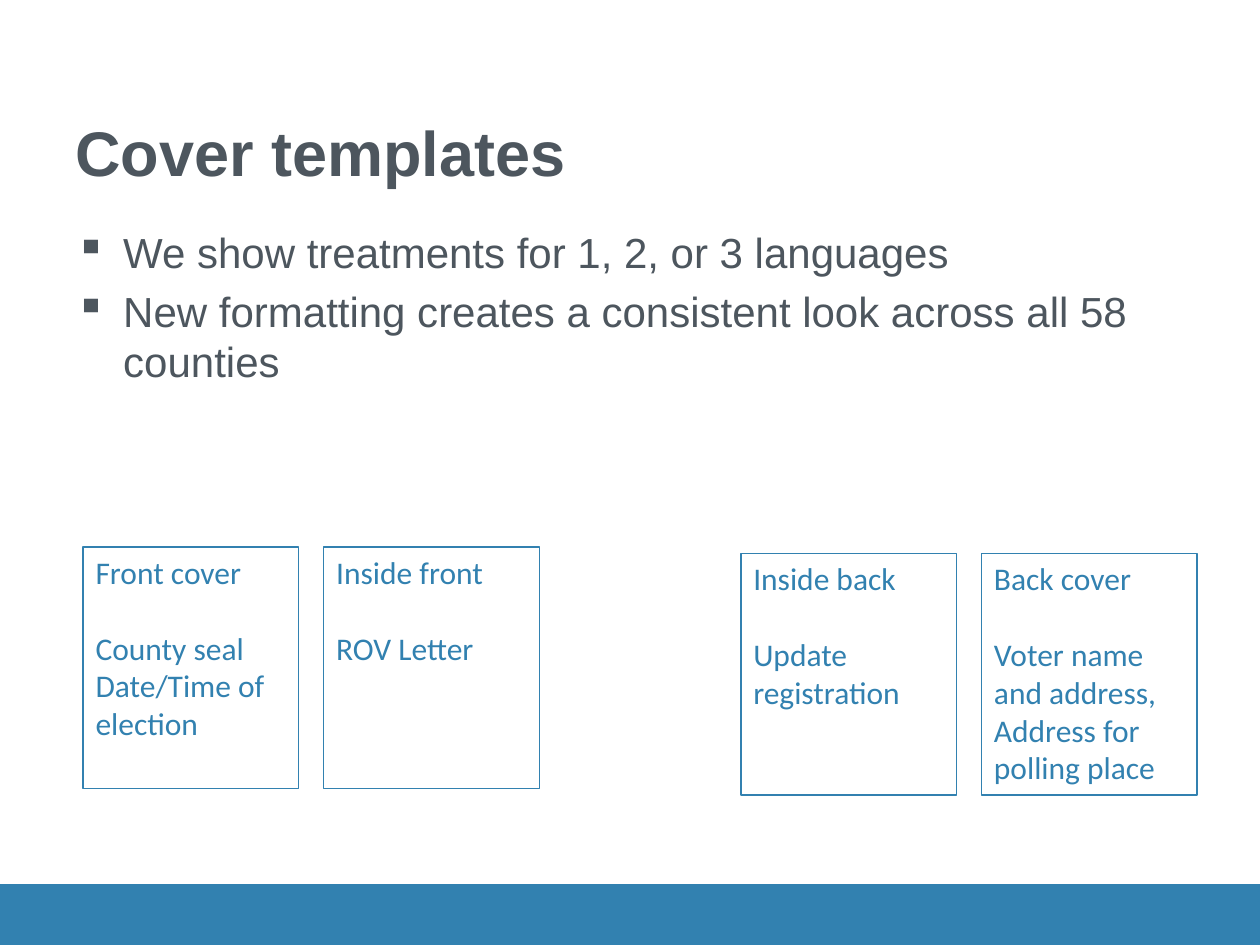
import dataclasses
import pptx
import pptx.dml.color
import pptx.enum.shapes
import pptx.enum.text
import pptx.oxml
import pptx.oxml.ns
import pptx.util

Inches = pptx.util.Inches
Pt = pptx.util.Pt
Color = pptx.dml.color.RGBColor.from_string
Anchor = pptx.enum.text.MSO_ANCHOR


@dataclasses.dataclass(frozen=True)
class Theme:
    ink: str = "4D565E"
    blue: str = "3281B0"
    head: str = "Arial"
    note: str = "Calibri"
    title: int = 36
    body: int = 24
    label: int = 18
    line: float = 0.75


@dataclasses.dataclass(frozen=True)
class Panel:
    left: float
    top: float
    name: str
    lines: tuple[str, ...]


THEME = Theme()
WIDE, TALL, STEP = 1.71, 1.92, 1.91
FRONT, BACK = (0.66, 4.34), (5.88, 4.39)
PANELS = (
    Panel(*FRONT, "Front cover", ("County seal", "Date/Time of election")),
    Panel(FRONT[0] + STEP, FRONT[1], "Inside front", ("ROV Letter",)),
    Panel(*BACK, "Inside back", ("Update registration",)),
    Panel(BACK[0] + STEP, BACK[1], "Back cover",
          ("Voter name and address,", "Address for polling place")),
)
POINTS = (
    "We show treatments for 1, 2, or 3 languages",
    "New formatting creates a consistent look across all 58 counties",
)


def style(para, face: str, size: int, color: str, bold: bool = False) -> None:
    para.alignment = pptx.enum.text.PP_ALIGN.LEFT
    for run in para.runs:
        font = run.font
        font.name, font.size, font.bold = face, Pt(size), bold
        font.color.rgb = Color(color)


def add_text(slide, left: float, top: float, wide: float, tall: float, text: str):
    box = slide.shapes.add_textbox(*map(Inches, (left, top, wide, tall)))
    box.text_frame.word_wrap = True
    box.text_frame.text = text
    return box.text_frame


def add_rect(slide, left: float, top: float, wide: float, tall: float, fill: bool):
    kind = pptx.enum.shapes.MSO_SHAPE.RECTANGLE
    rect = slide.shapes.add_shape(kind, *map(Inches, (left, top, wide, tall)))
    rect.shadow.inherit = False
    rect.line.color.rgb = Color(THEME.blue)
    rect.line.width = Pt(THEME.line)
    if fill:
        rect.fill.solid()
        rect.fill.fore_color.rgb = Color(THEME.blue)
    else:
        rect.fill.background()
    return rect


def add_bullet(para) -> None:
    props = para._p.get_or_add_pPr()
    props.set("marL", str(Inches(0.38)))
    props.set("indent", str(-Inches(0.38)))
    mark = pptx.oxml.parse_xml(
        f'<a:buChar {pptx.oxml.ns.nsdecls("a")} char="▪"/>')
    props.append(mark)


def add_panel(slide, panel: Panel) -> None:
    frame = add_rect(slide, panel.left, panel.top, WIDE, TALL, False).text_frame
    frame.word_wrap = True
    frame.vertical_anchor = Anchor.TOP
    frame.text = "\n".join((panel.name, *panel.lines))
    for para in frame.paragraphs:
        style(para, THEME.note, THEME.label, THEME.blue)
    # One line of space sets the name apart from its contents
    frame.paragraphs[1].space_before = Pt(21.6)


def main() -> None:
    deck = pptx.Presentation()
    deck.slide_width, deck.slide_height = Inches(10), Inches(7.5)
    slide = deck.slides.add_slide(deck.slide_layouts[6])

    # Footer band
    add_rect(slide, 0, 7.02, 10, 0.5, True)

    # Title
    title = add_text(slide, 0.5, 0.3, 9, 1.25, "Cover templates")
    title.vertical_anchor = Anchor.BOTTOM
    style(title.paragraphs[0], THEME.head, THEME.title, THEME.ink, True)

    # Bullets
    body = add_text(slide, 0.5, 1.75, 9, 4.95, "\n".join(POINTS))
    for spot, para in enumerate(body.paragraphs):
        add_bullet(para)
        style(para, THEME.head, THEME.body, THEME.ink)
        if spot:
            para.space_before = Pt(THEME.body * 0.2)

    # Cover panels
    for panel in PANELS:
        add_panel(slide, panel)

    deck.save("out.pptx")


if __name__ == "__main__":
    main()
